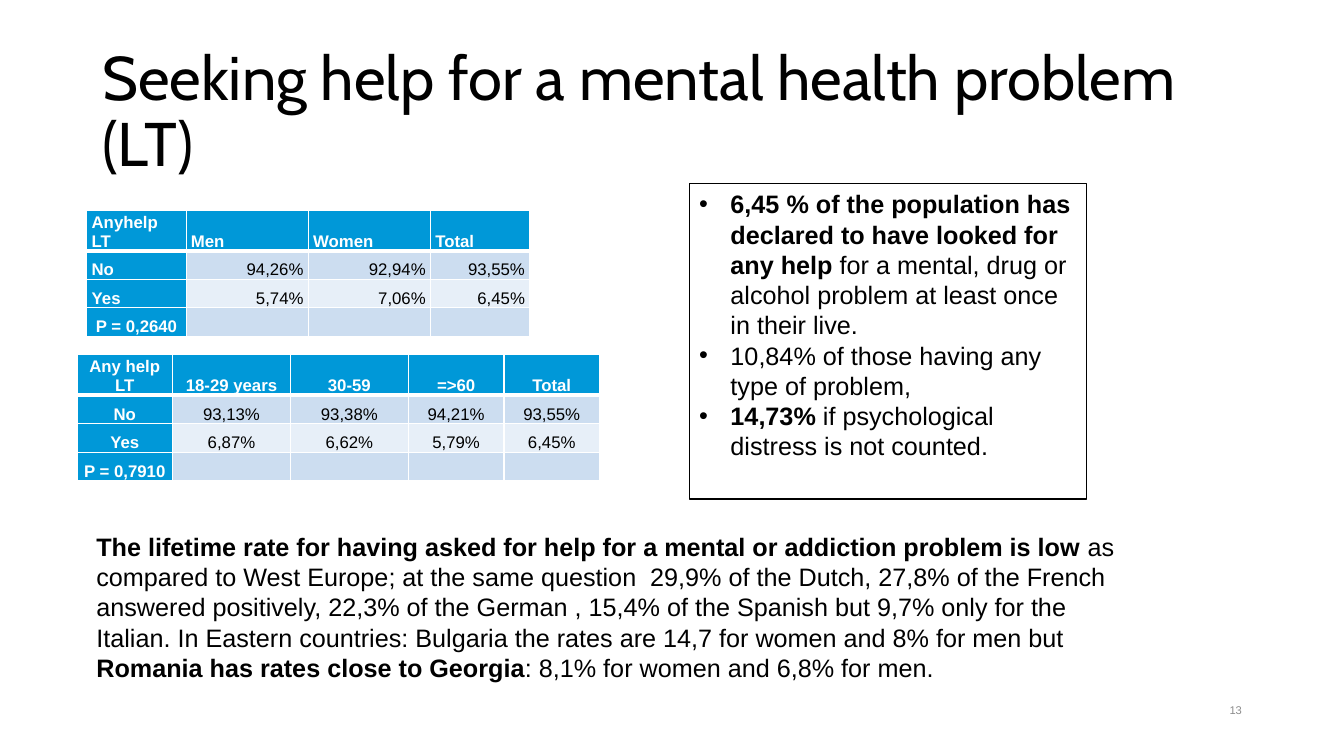
from dataclasses import dataclass

from lxml import etree
from pptx import Presentation
from pptx import util as u
from pptx.dml.color import RGBColor
from pptx.enum import shapes, text
from pptx.oxml import ns


@dataclass(frozen=True)
class Theme:
    black: str = "000000"
    white: str = "FFFFFF"
    grey: str = "8C8C8C"
    header: str = "0098D8"
    bands: tuple = ("CCDDF0", "E7EFF8")
    heading_font: str = "Cabin"
    body_font: str = "Arial"
    title_size: int = 44
    body_size: int = 18
    table_size: int = 12
    number_size: int = 8


THEME = Theme()
LEFT, CENTER, RIGHT = text.PP_ALIGN.LEFT, text.PP_ALIGN.CENTER, text.PP_ALIGN.RIGHT
HEADER_HEIGHT, ROW_HEIGHT = 0.98, 0.72

HELP_BY_SEX = [
    ["Anyhelp LT", "Men", "Women", "Total"],
    ["No", "94,26%", "92,94%", "93,55%"],
    ["Yes", "5,74%", "7,06%", "6,45%"],
    ["P = 0,2640", "", "", ""],
]
HELP_BY_AGE = [
    ["Any help LT", "18-29 years", "30-59", "=>60", "Total"],
    ["No", "93,13%", "93,38%", "94,21%", "93,55%"],
    ["Yes", "6,87%", "6,62%", "5,79%", "6,45%"],
    ["P = 0,7910", "", "", "", ""],
]
# Each paragraph is a list of (wording, bold) parts
KEY_FINDINGS = [
    [("6,45 % of the population has declared to have looked for any help ", True),
     ("for a mental, drug or alcohol problem at least once in their live.", False)],
    [("10,84% of those having any type of problem,", False)],
    [("14,73% ", True), ("if psychological distress is not counted.", False)],
]
COMPARISON = [
    [("The lifetime rate for having asked for help for a mental or addiction "
      "problem is low ", True),
     ("as compared to West Europe; at the same question  29,9% of the Dutch, "
      "27,8% of the French answered positively, 22,3% of the German , 15,4% of "
      "the Spanish but 9,7% only for the Italian. In Eastern countries: Bulgaria "
      "the rates are 14,7 for women and 8% for men but ", False),
     ("Romania has rates close to Georgia", True),
     (": 8,1% for women and 6,8% for men.", False)],
]


def write_text(frame, paragraphs, size=THEME.body_size, font=THEME.body_font,
               color=THEME.black, align=LEFT, spacing=None, bullet=False):
    for index, parts in enumerate(paragraphs):
        paragraph = frame.paragraphs[0] if index == 0 else frame.add_paragraph()
        paragraph.alignment = align
        if spacing:
            paragraph.line_spacing = spacing
        if bullet:
            add_bullet(paragraph)
        for wording, bold in parts:
            run = paragraph.add_run()
            run.text = wording
            run.font.size = u.Pt(size)
            run.font.name = font
            run.font.bold = bold
            run.font.color.rgb = RGBColor.from_string(color)


def add_bullet(paragraph):
    properties = paragraph._p.get_or_add_pPr()
    indent = u.Cm(0.79)
    properties.set("marL", str(indent))
    properties.set("indent", str(-indent))
    etree.SubElement(properties, ns.qn("a:buFont"), typeface=THEME.body_font)
    etree.SubElement(properties, ns.qn("a:buChar"), char="•")


def add_text(slide, box, paragraphs, anchor=text.MSO_ANCHOR.TOP, **text_format):
    frame = slide.shapes.add_textbox(*map(u.Cm, box)).text_frame
    frame.word_wrap = True
    frame.vertical_anchor = anchor
    write_text(frame, paragraphs, **text_format)


def add_framed_list(slide, box, paragraphs):
    shape = slide.shapes.add_shape(shapes.MSO_SHAPE.RECTANGLE, *map(u.Cm, box))
    shape.shadow.inherit = False
    shape.fill.solid()
    shape.fill.fore_color.rgb = RGBColor.from_string(THEME.white)
    shape.line.color.rgb = RGBColor.from_string(THEME.black)
    shape.line.width = u.Pt(1)
    shape.text_frame.word_wrap = True
    shape.text_frame.vertical_anchor = text.MSO_ANCHOR.TOP
    write_text(shape.text_frame, paragraphs, bullet=True)


def add_borders(cell, bottom):
    properties = cell._tc.get_or_add_tcPr()
    for side, points in (("L", 1), ("R", 1), ("T", 1), ("B", bottom)):
        line = etree.SubElement(properties, ns.qn(f"a:ln{side}"), w=str(u.Pt(points)))
        fill = etree.SubElement(line, ns.qn("a:solidFill"))
        etree.SubElement(fill, ns.qn("a:srgbClr"), val=THEME.white)


def fill_cell(cell, wording, fill, is_label, align, bottom):
    add_borders(cell, bottom)
    cell.fill.solid()
    cell.fill.fore_color.rgb = RGBColor.from_string(fill)
    cell.vertical_anchor = text.MSO_ANCHOR.BOTTOM
    cell.margin_left = cell.margin_right = u.Cm(0.12)
    cell.margin_top = cell.margin_bottom = 0
    if wording:
        write_text(cell.text_frame, [[(wording, is_label)]], size=THEME.table_size,
                   color=THEME.white if is_label else THEME.black, align=align)
    else:
        # Keeps an empty cell from stretching its row
        etree.SubElement(cell.text_frame.paragraphs[0]._p, ns.qn("a:endParaRPr"),
                         sz=str(THEME.table_size * 100))


def add_data_table(slide, left, top, widths, rows, label_align, value_align):
    heights = [HEADER_HEIGHT] + [ROW_HEIGHT] * (len(rows) - 1)
    box = map(u.Cm, (left, top, sum(widths), sum(heights)))
    table = slide.shapes.add_table(len(rows), len(widths), *box).table
    for column, width in zip(table.columns, widths):
        column.width = u.Cm(width)
    for r, (row, height) in enumerate(zip(rows, heights)):
        table.rows[r].height = u.Cm(height)
        for c, wording in enumerate(row):
            is_label = r == 0 or c == 0
            align = label_align if is_label else value_align
            if wording.startswith("P ="):
                align = CENTER
            fill = THEME.header if is_label else THEME.bands[(r - 1) % 2]
            fill_cell(table.cell(r, c), wording, fill, is_label, align,
                      bottom=3 if r == 0 else 1)


def main():
    presentation = Presentation()
    presentation.slide_width, presentation.slide_height = u.Cm(33.87), u.Cm(19.05)
    slide = presentation.slides.add_slide(presentation.slide_layouts[6])

    # Page number and title
    middle = text.MSO_ANCHOR.MIDDLE
    add_text(slide, (23.93, 17.37, 7.62, 1.02), [[("13", False)]], anchor=middle,
             size=THEME.number_size, color=THEME.grey, align=RIGHT)
    add_text(slide, (2.33, 1.02, 29.21, 3.68),
             [[("Seeking help for a mental health problem (LT)", False)]],
             anchor=middle, size=THEME.title_size, font=THEME.heading_font, spacing=0.9)

    # Tables by sex and by age
    add_data_table(slide, 2.19, 5.3, (2.5, 3.08, 3.08, 2.5), HELP_BY_SEX, LEFT, RIGHT)
    add_data_table(slide, 1.94, 8.94, (2.41, 2.97, 2.97, 2.41, 2.41), HELP_BY_AGE,
                   CENTER, CENTER)

    # Findings and comparison with other countries
    add_framed_list(slide, (17.37, 4.63, 10.01, 7.95), KEY_FINDINGS)
    add_text(slide, (2.18, 13.26, 26.64, 4.11), COMPARISON)

    presentation.save("out.pptx")


if __name__ == "__main__":
    main()
